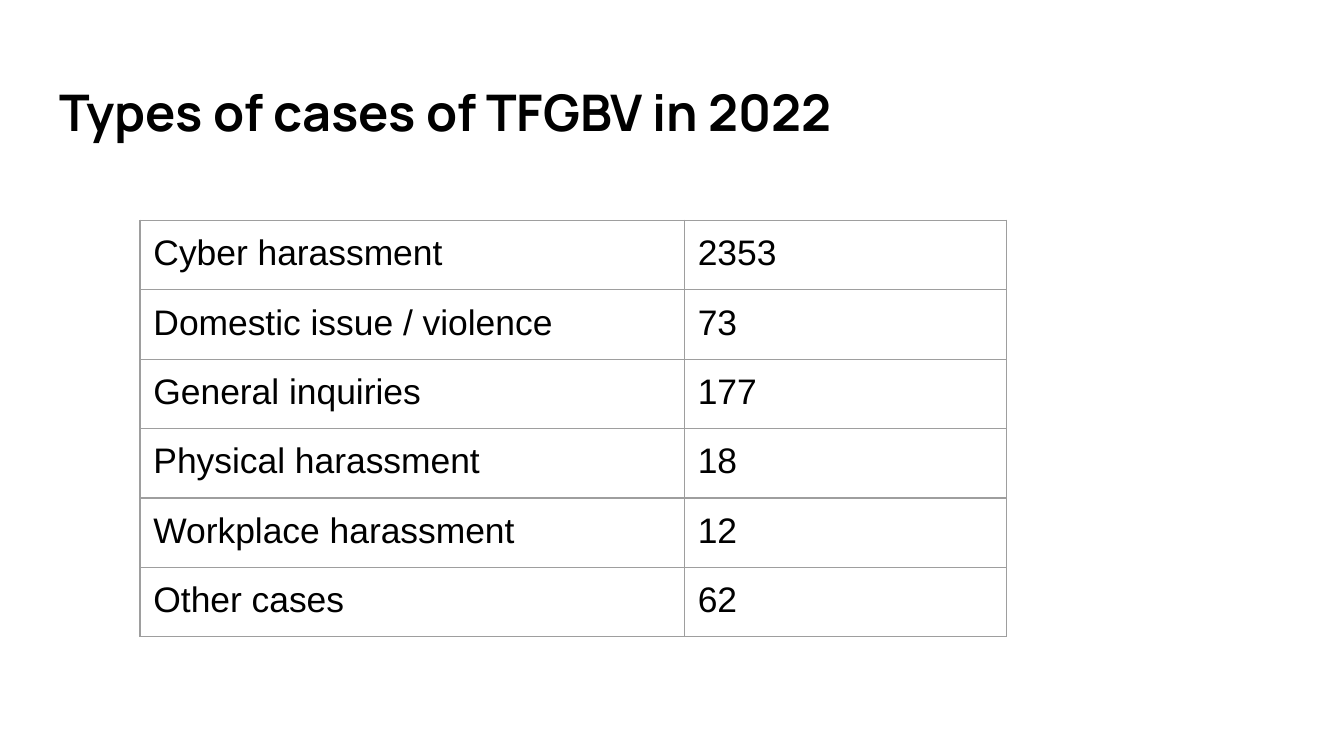
"""Build a slide with a table of TFGBV case types in 2022."""
from lxml import etree
from pptx import Presentation
from pptx.dml.color import RGBColor
from pptx.enum.text import MSO_ANCHOR, PP_ALIGN
from pptx.oxml.ns import qn
from pptx.util import Pt

LEFT, TOP, MIDDLE = PP_ALIGN.LEFT, MSO_ANCHOR.TOP, MSO_ANCHOR.MIDDLE

TITLE = "Types of cases of TFGBV in 2022"
CASES = [
    ("Cyber harassment", "2353"),
    ("Domestic issue / violence", "73"),
    ("General inquiries", "177"),
    ("Physical harassment", "18"),
    ("Workplace harassment", "12"),
    ("Other cases", "62"),
]
THEME = {
    "text": "000000", "border": "9E9E9E", "border_width": 0.75, "inset": 7.2,
    "title_font": "Manrope", "title_size": 27,
    "body_font": "Arial", "body_size": 19,
}
SLIDE_SIZE = (720, 405)
TITLE_BOX = (24.5, 35.3, 671, 49)
TABLE_ORIGIN = (75, 118)
COLUMN_WIDTHS = (291.6, 172.8)
ROW_HEIGHT = 37.2


def write_text(tf, text, font, size, bold=False):
    p = tf.paragraphs[0]
    p.alignment = LEFT
    r = p.add_run()
    r.text = text
    r.font.name, r.font.size, r.font.bold = font, Pt(size), bold
    r.font.color.rgb = RGBColor.from_string(THEME["text"])


def set_insets(item):
    for side in ("left", "right", "top", "bottom"):
        setattr(item, f"margin_{side}", Pt(THEME["inset"]))


def set_borders(cell):
    tc_pr = cell._tc.get_or_add_tcPr()
    for tag in ("a:lnL", "a:lnR", "a:lnT", "a:lnB"):
        ln = etree.SubElement(tc_pr, qn(tag), w=str(Pt(THEME["border_width"])))
        fill = etree.SubElement(ln, qn("a:solidFill"))
        etree.SubElement(fill, qn("a:srgbClr"), val=THEME["border"])


def add_title(s):
    sp = s.shapes.title
    sp.left, sp.top, sp.width, sp.height = map(Pt, TITLE_BOX)
    tf = sp.text_frame
    tf.word_wrap, tf.vertical_anchor = True, MIDDLE
    set_insets(tf)
    write_text(tf, TITLE, THEME["title_font"], THEME["title_size"], bold=True)


def add_case_table(s):
    size = (sum(COLUMN_WIDTHS), ROW_HEIGHT * len(CASES))
    frame = s.shapes.add_table(len(CASES), len(COLUMN_WIDTHS), *map(Pt, TABLE_ORIGIN + size))
    table = frame.table
    table.first_row = table.horz_banding = False
    for column, width in zip(table.columns, COLUMN_WIDTHS):
        column.width = Pt(width)
    for row, case in zip(table.rows, CASES):
        row.height = Pt(ROW_HEIGHT)
        for cell, text in zip(row.cells, case):
            set_insets(cell)
            cell.vertical_anchor = TOP
            set_borders(cell)
            cell.fill.background()
            write_text(cell.text_frame, text, THEME["body_font"], THEME["body_size"])


def main():
    prs = Presentation()
    prs.slide_width, prs.slide_height = map(Pt, SLIDE_SIZE)
    s = prs.slides.add_slide(prs.slide_layouts[5])
    add_title(s)
    add_case_table(s)
    prs.save("out.pptx")


if __name__ == "__main__":
    main()
